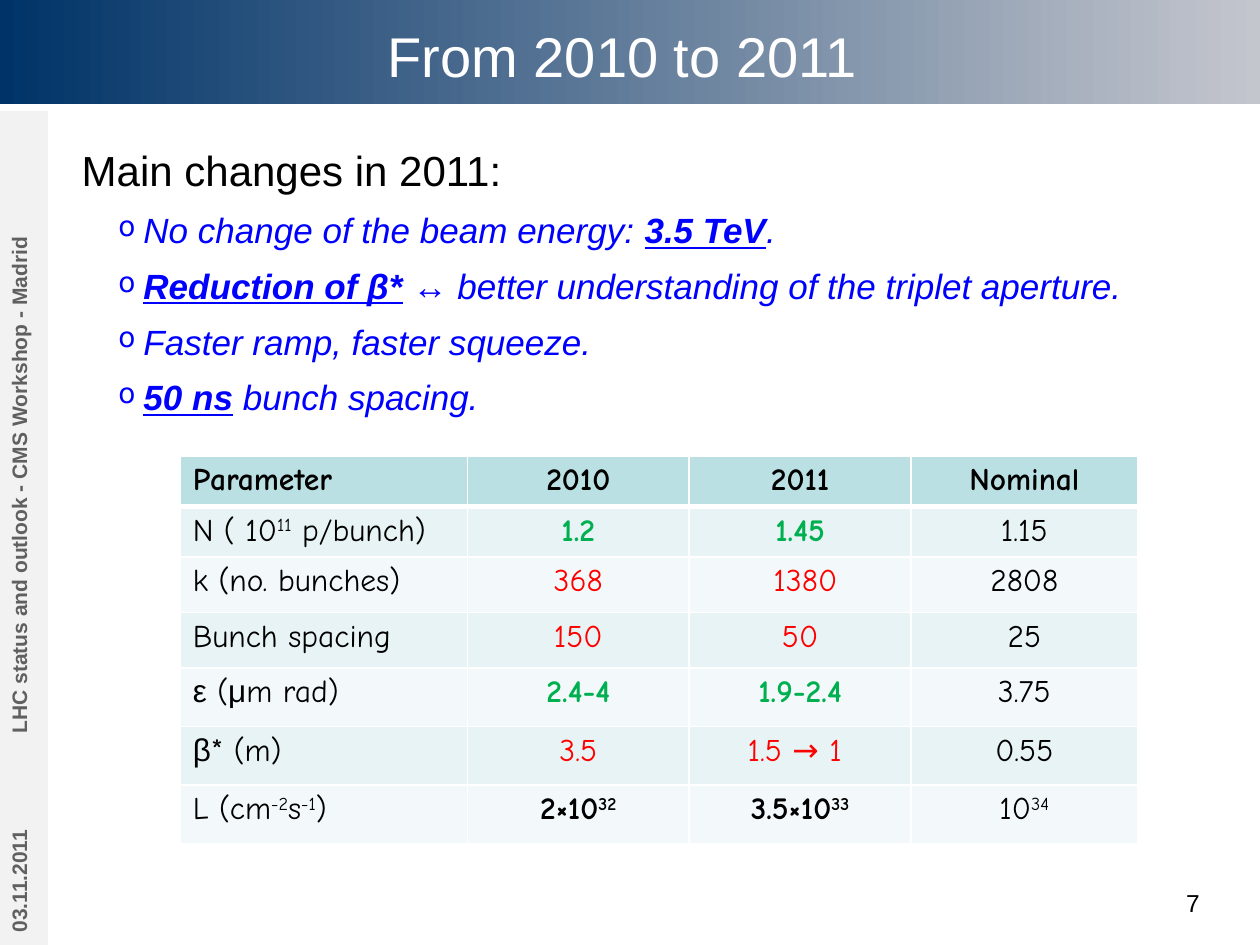
from itertools import groupby

from lxml import etree
from pptx import Presentation, util as u
from pptx.dml.color import RGBColor
from pptx.enum import shapes, text
from pptx.oxml.ns import qn

COLORS = {
    "navy": "003368", "silver": "C4C6CD", "white": "FFFFFF", "black": "000000",
    "strip": "F2F2F2", "gray": "606060", "blue": "0000FF", "green": "00B050",
    "red": "FF0000", "header": "BBE0E3", "odd": "E7F3F4", "even": "F3F9FA",
}
BODY_FONT, TABLE_FONT = "Arial", "Comic Neue"
GREEK = "εμβ"
COLUMNS, ROWS = 100, 75  # grid over the slide
ALIGN = text.PP_ALIGN


def rgb(name):
    return RGBColor.from_string(COLORS[name])


def add_element(parent, tag, **attributes):
    return etree.SubElement(parent, qn(tag), **attributes)


class SlideBuilder:
    def __init__(self, presentation):
        self.width = presentation.slide_width
        self.height = presentation.slide_height
        self.slide = presentation.slides.add_slide(presentation.slide_layouts[5])
        self.shapes = self.slide.shapes

    def x(self, columns):
        return round(self.width * columns / COLUMNS)

    def y(self, rows):
        return round(self.height * rows / ROWS)

    def box(self, left, top, width, height):
        return self.x(left), self.y(top), self.x(width), self.y(height)

    def style(self, paragraph, size, color, font=BODY_FONT, bold=False,
              italic=False, align=ALIGN.LEFT):
        paragraph.alignment = align
        paragraph.font.name = font
        paragraph.font.size = u.Pt(size)
        paragraph.font.bold = bold
        paragraph.font.italic = italic
        paragraph.font.color.rgb = rgb(color)

    def rectangle(self, *place):
        shape = self.shapes.add_shape(shapes.MSO_SHAPE.RECTANGLE, *self.box(*place))
        shape.shadow.inherit = False
        shape.line.fill.background()
        return shape

    def band(self, *place):
        shape = self.rectangle(*place)
        shape.fill.gradient()
        shape.fill.gradient_angle = 0
        for stop, color in zip(shape.fill.gradient_stops, ("navy", "silver")):
            stop.color.rgb = rgb(color)
        self.shapes._spTree.insert(2, shape._element)  # behind the title

    def title(self, words, *place):
        shape = self.shapes.title
        shape.left, shape.top, shape.width, shape.height = self.box(*place)
        shape.text_frame.text = words
        shape.text_frame.vertical_anchor = text.MSO_ANCHOR.MIDDLE
        self.style(shape.text_frame.paragraphs[0], 32, "white", align=ALIGN.CENTER)

    def side_label(self, words, *place):
        shape = self.rectangle(*place)
        shape.rotation = 270
        shape.fill.solid()
        shape.fill.fore_color.rgb = rgb("strip")
        shape.text_frame.text = words
        shape.text_frame.vertical_anchor = text.MSO_ANCHOR.TOP
        self.style(shape.text_frame.paragraphs[0], 12, "gray", bold=True)

    def textbox(self, *place):
        frame = self.shapes.add_textbox(*self.box(*place)).text_frame
        frame.word_wrap = True
        return frame

    def page_number(self, number, *place):
        frame = self.textbox(*place)
        frame.text = number
        self.style(frame.paragraphs[0], 14, "black", align=ALIGN.RIGHT)

    def bullet_list(self, heading, items, *place):
        """Words between underscores are bold and underlined."""
        frame = self.textbox(*place)
        frame.auto_size = text.MSO_AUTO_SIZE.SHAPE_TO_FIT_TEXT
        paragraph = frame.paragraphs[0]
        paragraph.text = heading
        paragraph.line_spacing = 1.2
        self.style(paragraph, 24, "black")
        for item in items:
            paragraph = frame.add_paragraph()
            paragraph.level = 1
            paragraph.line_spacing = 1.2
            paragraph.space_before = u.Pt(3)
            properties = paragraph._p.get_or_add_pPr()
            properties.set("marL", str(u.Inches(0.49)))
            properties.set("indent", str(u.Inches(-0.2)))
            color = add_element(properties, "a:buClr")
            add_element(color, "a:srgbClr", val=COLORS["blue"])
            add_element(properties, "a:buSzPct", val="80000")
            add_element(properties, "a:buChar", char="o")
            for index, words in enumerate(item.split("_")):
                if words:
                    run = paragraph.add_run()
                    run.text = words
                    if index % 2:
                        run.font.bold = run.font.underline = True
            self.style(paragraph, 20, "blue", italic=True)

    def cell_text(self, paragraph, words):
        """Parts between carets are raised; Greek letters use the body font."""
        for index, part in enumerate(words.split("^")):
            for greek, letters in groupby(part, key=lambda letter: letter in GREEK):
                run = paragraph.add_run()
                run.text = "".join(letters)
                if greek:
                    run.font.name = BODY_FONT
                if index % 2:
                    run._r.get_or_add_rPr().set("baseline", "30000")

    def borders(self, cell, top, bottom):
        properties = cell._tc.get_or_add_tcPr()
        sides = (("a:lnL", 1), ("a:lnR", 1), ("a:lnT", top), ("a:lnB", bottom))
        for index, (tag, points) in enumerate(sides):
            line = add_element(properties, tag, w=str(u.Pt(points)))
            fill = add_element(line, "a:solidFill")
            add_element(fill, "a:srgbClr", val=COLORS["white"])
            properties.insert(index, line)

    def table(self, rows, styles, widths, heights, left, top):
        place = self.box(left, top, sum(widths), sum(heights))
        table = self.shapes.add_table(len(rows), len(widths), *place).table
        table.horz_banding = False
        for column, width in zip(table.columns, widths):
            column.width = self.x(width)
        for r, (row, (color, bold)) in enumerate(zip(rows, styles)):
            table.rows[r].height = self.y(heights[r])
            for c, words in enumerate(row):
                cell = table.cell(r, c)
                cell.fill.solid()
                band = "header" if r == 0 else "odd" if r % 2 else "even"
                cell.fill.fore_color.rgb = rgb(band)
                self.borders(cell, 3 if r == 1 else 1, 3 if r == 0 else 1)
                paragraph = cell.text_frame.paragraphs[0]
                self.cell_text(paragraph, words)
                measured = c in (1, 2)
                self.style(paragraph, 18, color if measured else "black", TABLE_FONT,
                           bold=r == 0 or (bold and measured),
                           align=ALIGN.CENTER if c else ALIGN.LEFT)


def main():
    presentation = Presentation()
    presentation.slide_width, presentation.slide_height = u.Inches(10), u.Inches(7.5)
    builder = SlideBuilder(presentation)

    # Heading band
    builder.band(0, 0, 100, 8.3)
    builder.title("From 2010 to 2011", 8.8, 0, 81.2, 8.8)

    # Side strip and page number
    builder.side_label("03.11.2011", -6, 65.2, 15.8, 3.8)
    builder.side_label("LHC status and outlook - CMS Workshop - Madrid",
                       -23.3, 32.1, 50.4, 3.8)
    builder.page_number("7", 86.2, 70, 10, 3.5)

    # Parameter table
    rows = [
        ("Parameter", "2010", "2011", "Nominal"),
        ("N ( 10^11^ p/bunch)", "1.2", "1.45", "1.15"),
        ("k (no. bunches)", "368", " 1380", "2808"),
        ("Bunch spacing", "150", "50", "25"),
        ("ε (μm rad)", "2.4-4", "1.9-2.4", "3.75"),
        ("β* (m)", "3.5", "1.5 → 1 ", "0.55"),
        ("L (cm^-2^s^-1^)", "2×10^32^", "3.5×10^33^", "10^34^"),
    ]
    plain, better, changed = ("black", True), ("green", True), ("red", False)
    styles = [plain, better, changed, changed, better, changed, plain]
    builder.table(rows, styles, widths=(22.8, 17.6, 17.6, 18),
                  heights=(4, 4, 4.4, 4.4, 4.65, 4.65, 4.65), left=14.3, top=36.2)

    # Main changes
    builder.bullet_list("Main changes in 2011:", [
        "No change of the beam energy: _3.5 TeV_.",
        "_Reduction of β*_ ↔ better understanding of the triplet aperture.",
        "Faster ramp, faster squeeze.",
        "_50 ns_ bunch spacing.",
    ], 5.5, 10.2, 92.8, 23.7)

    presentation.save("out.pptx")


if __name__ == "__main__":
    main()
